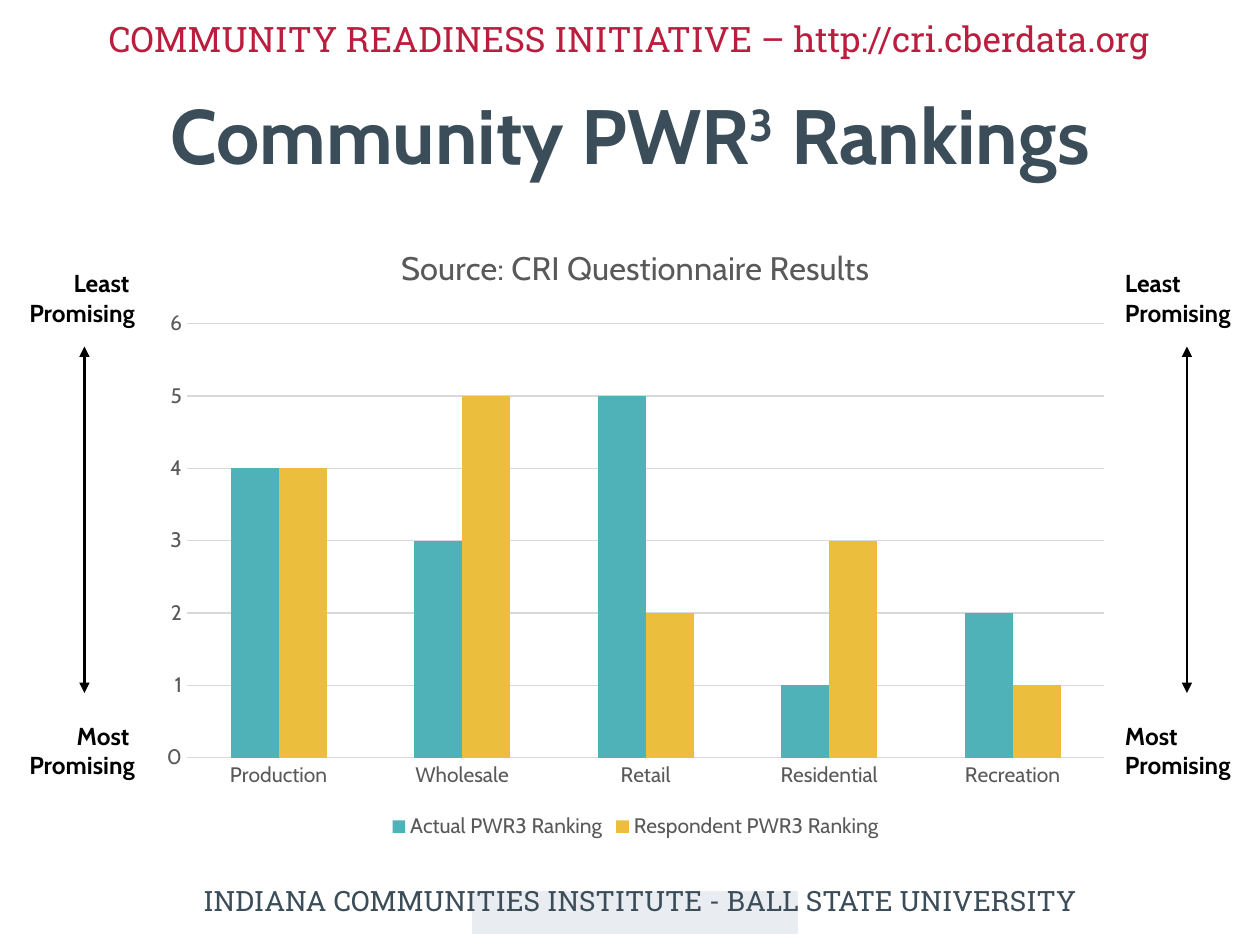
from lxml import etree
from pptx import Presentation
from pptx.chart.data import CategoryChartData
from pptx.dml.color import RGBColor
from pptx.enum.chart import XL_CHART_TYPE, XL_LEGEND_POSITION, XL_TICK_MARK
from pptx.enum.shapes import MSO_CONNECTOR, MSO_SHAPE
from pptx.enum.text import MSO_ANCHOR, PP_ALIGN
from pptx.oxml.ns import qn
from pptx.util import Inches, Pt

CLUSTERED = XL_CHART_TYPE.COLUMN_CLUSTERED
BOTTOM = XL_LEGEND_POSITION.BOTTOM
NO_TICK = XL_TICK_MARK.NONE
STRAIGHT = MSO_CONNECTOR.STRAIGHT
RECTANGLE = MSO_SHAPE.RECTANGLE
TOP, MIDDLE = MSO_ANCHOR.TOP, MSO_ANCHOR.MIDDLE
LEFT, CENTER, RIGHT = PP_ALIGN.LEFT, PP_ALIGN.CENTER, PP_ALIGN.RIGHT

COLORS = {
    "slate": "3B4D59", "crimson": "BA1D3D", "pale": "E9ECF1", "black": "000000",
    "grey": "595959", "grid": "D9D9D9", "teal": "4FB2B9", "gold": "ECBE3D",
}
BODY_FONT, BANNER_FONT = "Cabin", "Roboto Slab"

CATEGORIES = ["Production", "Wholesale", "Retail", "Residential", "Recreation"]
SERIES = [
    ("Actual PWR3 Ranking", [4, 3, 5, 1, 2], "teal"),
    ("Respondent PWR3 Ranking", [4, 5, 2, 3, 1], "gold"),
]


def color(name):
    return RGBColor.from_string(COLORS[name])


class SlideBuilder:
    def __init__(self, slide):
        self.slide = slide

    def style(self, font, size, color_name, name=BODY_FONT, bold=False):
        values = {"name": name, "size": Pt(size), "bold": bold}
        for attribute, value in values.items():
            setattr(font, attribute, value)
        font.color.rgb = color(color_name)

    def box(self, place, color_name):
        shape = self.slide.shapes.add_shape(RECTANGLE, *map(Inches, place))
        shape.shadow.inherit = False
        shape.fill.solid()
        shape.fill.fore_color.rgb = color(color_name)
        shape.line.color.rgb = color(color_name)
        shape.line.width = Pt(0.75)

    def text(self, place, paragraphs, align, anchor=TOP, **font_style):
        """Each paragraph is a list of (text, superscript) runs."""
        frame = self.slide.shapes.add_textbox(*map(Inches, place)).text_frame
        frame.word_wrap = True
        frame.vertical_anchor = anchor
        for index, runs in enumerate(paragraphs):
            paragraph = frame.add_paragraph() if index else frame.paragraphs[0]
            paragraph.alignment = align
            for content, superscript in runs:
                run = paragraph.add_run()
                run.text = content
                self.style(run.font, **font_style)
                if superscript:
                    run._r.get_or_add_rPr().set("baseline", "30000")

    def double_arrow(self, x, top, bottom):
        ends = map(Inches, (x, top, x, bottom))
        connector = self.slide.shapes.add_connector(STRAIGHT, *ends)
        connector.line.color.rgb = color("black")
        connector.line.width = Pt(1.5)
        line = connector.line._get_or_add_ln()
        for end in ("a:headEnd", "a:tailEnd"):
            etree.SubElement(line, qn(end), type="triangle")
        etree.SubElement(connector._element.spPr, qn("a:effectLst"))

    def column_chart(self, place, title, categories, series_rows):
        data = CategoryChartData()
        data.categories = categories
        for name, values, _ in series_rows:
            data.add_series(name, values)
        frame = self.slide.shapes.add_chart(CLUSTERED, *map(Inches, place), data)
        chart = frame.chart
        self.style(chart.font, 10, "black")

        chart.has_title = True
        chart.chart_title.include_in_layout = False
        title_frame = chart.chart_title.text_frame
        title_frame.text = title
        self.style(title_frame.paragraphs[0].runs[0].font, 18.6, "grey")

        chart.has_legend = True
        chart.legend.position = BOTTOM
        chart.legend.include_in_layout = False
        self.style(chart.legend.font, 12, "grey")

        for axis in (chart.category_axis, chart.value_axis):
            axis.major_tick_mark = axis.minor_tick_mark = NO_TICK
            self.style(axis.tick_labels.font, 12, "grey")
        chart.value_axis.has_major_gridlines = True
        chart.value_axis.format.line.fill.background()
        gridlines = chart.value_axis.major_gridlines
        for line in (chart.category_axis.format.line, gridlines.format.line):
            line.color.rgb = color("grid")
            line.width = Pt(0.75)
        values = {"minimum_scale": 0, "maximum_scale": 6, "major_unit": 1}
        for attribute, value in values.items():
            setattr(chart.value_axis, attribute, value)

        plot = chart.plots[0]
        plot.gap_width, plot.overlap = 182, 0
        plot.vary_by_categories = False
        for series, (_, _, color_name) in zip(plot.series, series_rows):
            series.format.fill.solid()
            series.format.fill.fore_color.rgb = color(color_name)


def main():
    presentation = Presentation()
    presentation.slide_width = Inches(10)
    presentation.slide_height = Inches(7.5)
    builder = SlideBuilder(presentation.slides.add_slide(presentation.slide_layouts[6]))

    builder.box((3.75, 7.08, 2.58, 0.33), "pale")
    builder.text((0.58, 6.96, 9, 0.37),
                 [[("INDIANA COMMUNITIES INSTITUTE - BALL STATE UNIVERSITY", False)]],
                 CENTER, size=16, color_name="slate", name=BANNER_FONT)
    builder.text((0.08, 0.09, 9.83, 0.44),
                 [[("COMMUNITY READINESS INITIATIVE – http://cri.cberdata.org", False)]],
                 CENTER, size=20, color_name="crimson", name=BANNER_FONT)
    builder.text((0.5, 0.58, 9, 0.97),
                 [[("Community PWR", False), ("3", True), (" Rankings", False)]],
                 CENTER, MIDDLE, size=44, color_name="slate", bold=True)

    builder.column_chart((1.17, 1.75, 7.75, 4.95),
                         "Source: CRI Questionnaire Results", CATEGORIES, SERIES)

    sides = [(0, 0.67, RIGHT, " "), (8.83, 9.42, LEFT, "")]
    for label_left, arrow_x, align, ending in sides:
        for degree, top in (("Least", 2.08), ("Most", 5.67)):
            builder.text((label_left, top, 1.17, 0.57),
                         [[(degree + ending, False)], [("Promising", False)]],
                         align, size=14, color_name="black", bold=True)
        builder.double_arrow(arrow_x, 2.75, 5.5)

    presentation.save("out.pptx")


if __name__ == "__main__":
    main()
